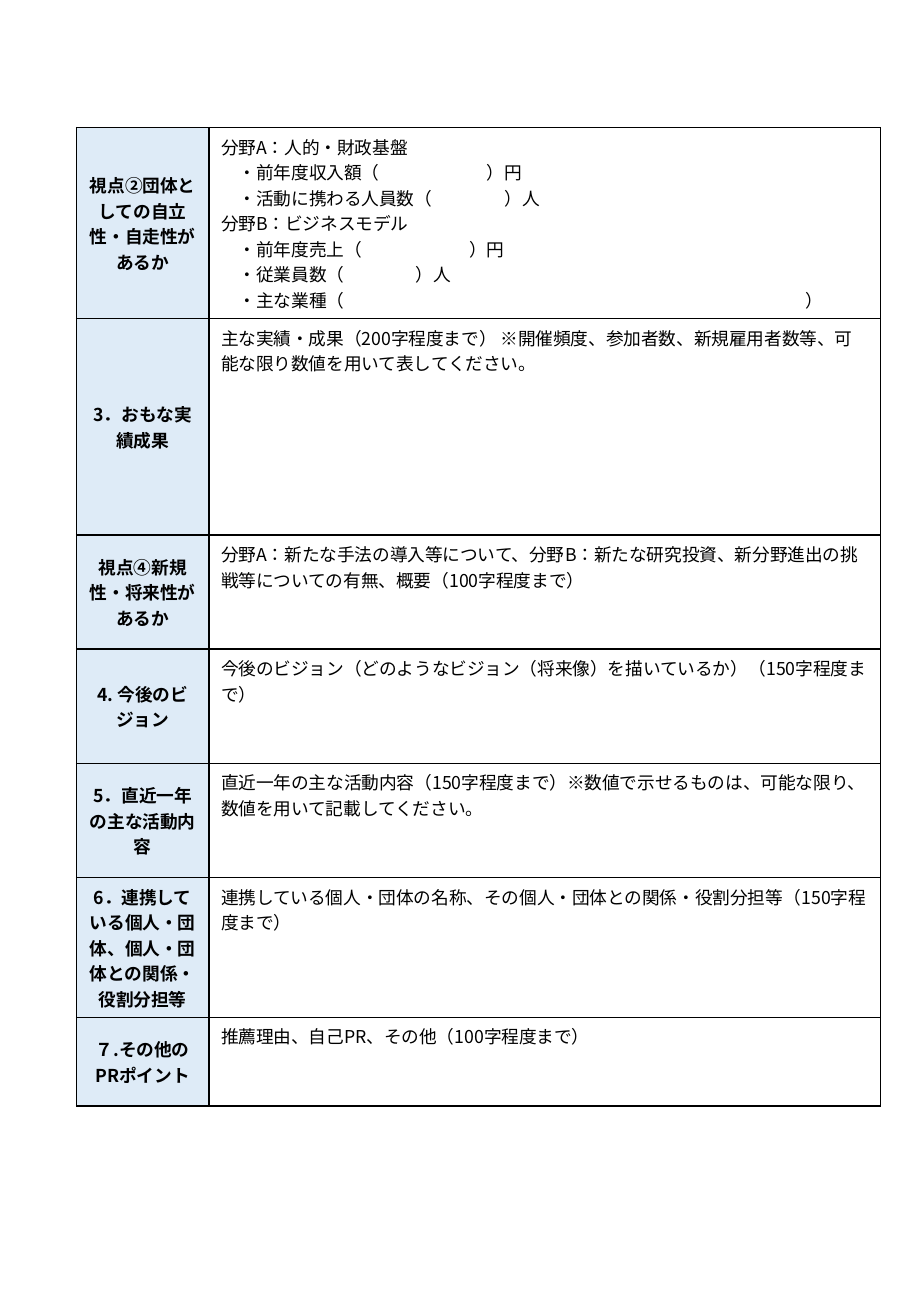
from lxml import etree
from pptx import Presentation
from pptx.dml.color import RGBColor
from pptx.enum.lang import MSO_LANGUAGE_ID as Language
from pptx.enum.text import MSO_ANCHOR as Anchor, PP_ALIGN as Align
from pptx.oxml.ns import qn
from pptx.util import Inches, Pt

FONT = "Noto Sans CJK JP"
SIZE = 10.5
EM = SIZE / 72  # width of one full-width character, in inches
BLACK, WHITE, PALE_BLUE = "000000", "FFFFFF", "DEEBF7"

# Content: heading, row height, lines; a line is its text or
# (text before the blank, text after it, blank width in characters)
ROWS = [
    ("視点②団体としての自立性・自走性があるか", 1.57, [
        "分野A：人的・財政基盤",
        ("・前年度収入額（", "）円", 6),
        ("・活動に携わる人員数（", "）人", 4),
        "分野B：ビジネスモデル",
        ("・前年度売上（", "）円", 6),
        ("・従業員数（", "）人", 4),
        ("・主な業種（", "）", 26),
    ]),
    ("3．おもな実績成果", 1.78, [
        "主な実績・成果（200字程度まで） ※開催頻度、参加者数、新規雇用者数等、"
        "可能な限り数値を用いて表してください。"]),
    ("視点➃新規性・将来性があるか", 0.94, [
        "分野A：新たな手法の導入等について、分野B：新たな研究投資、"
        "新分野進出の挑戦等についての有無、概要（100字程度まで）"]),
    ("4. 今後のビジョン", 0.94, [
        "今後のビジョン（どのようなビジョン（将来像）を描いているか）（150字程度まで）"]),
    ("5．直近一年の主な活動内容", 0.94, [
        "直近一年の主な活動内容（150字程度まで）※数値で示せるものは、"
        "可能な限り、数値を用いて記載してください。"]),
    ("6．連携している個人・団体、個人・団体との関係・役割分担等", 1.15, [
        "連携している個人・団体の名称、その個人・団体との関係・役割分担等（150字程度まで）"]),
    ("７.その他のPRポイント", 0.73, [
        "推薦理由、自己PR、その他（100字程度まで）"]),
]
COLUMNS = [1.09, 5.53]
LEFT, TOP = 0.63, 1.05


def color(value):
    return RGBColor.from_string(value)


def add_run(para, text, bold):
    run = para.add_run()
    run.text = text
    font = run.font
    font.size, font.bold, font.name = Pt(SIZE), bold, FONT
    font.color.rgb = color(BLACK)
    font.language_id = Language.JAPANESE
    etree.SubElement(run._r.rPr, qn("a:ea"), typeface=FONT)


def add_tabs(para, stops):
    tabs = etree.SubElement(para._p.get_or_add_pPr(), qn("a:tabLst"))
    for stop in stops:
        etree.SubElement(tabs, qn("a:tab"), pos=str(Inches(stop)), algn="l")


def style_cell(cell, fill):
    # Borders come before the fill in the cell properties
    properties = cell._tc.get_or_add_tcPr()
    for side in ("lnL", "lnR", "lnT", "lnB"):
        line = etree.SubElement(properties, qn(f"a:{side}"), w=str(Pt(1)))
        solid = etree.SubElement(line, qn("a:solidFill"))
        etree.SubElement(solid, qn("a:srgbClr"), val=BLACK)
    cell.fill.solid()
    cell.fill.fore_color.rgb = color(fill)


def fill_heading(cell, text):
    style_cell(cell, PALE_BLUE)
    cell.vertical_anchor = Anchor.MIDDLE
    para = cell.text_frame.paragraphs[0]
    para.alignment = Align.CENTER
    add_run(para, text, True)


def fill_answer(cell, lines):
    style_cell(cell, WHITE)
    frame = cell.text_frame
    for index, line in enumerate(lines):
        para = frame.add_paragraph() if index else frame.paragraphs[0]
        if isinstance(line, tuple):
            # One character of indent, then a blank to fill in
            before, after, blank = line
            add_tabs(para, [EM, (1 + len(before) + blank) * EM])
            line = f"\t{before}\t{after}"
        add_run(para, line, False)


deck = Presentation()
deck.slide_width, deck.slide_height = Inches(7.5), Inches(10.83)
page = deck.slides.add_slide(deck.slide_layouts[6])

# Application form table
height = sum(row[1] for row in ROWS)
form = page.shapes.add_table(len(ROWS), len(COLUMNS), Inches(LEFT), Inches(TOP),
                             Inches(sum(COLUMNS)), Inches(height)).table
form.first_row = form.horz_banding = False
for column, width in zip(form.columns, COLUMNS):
    column.width = Inches(width)
for index, (heading, row_height, lines) in enumerate(ROWS):
    form.rows[index].height = Inches(row_height)
    fill_heading(form.cell(index, 0), heading)
    fill_answer(form.cell(index, 1), lines)

deck.save("out.pptx")
